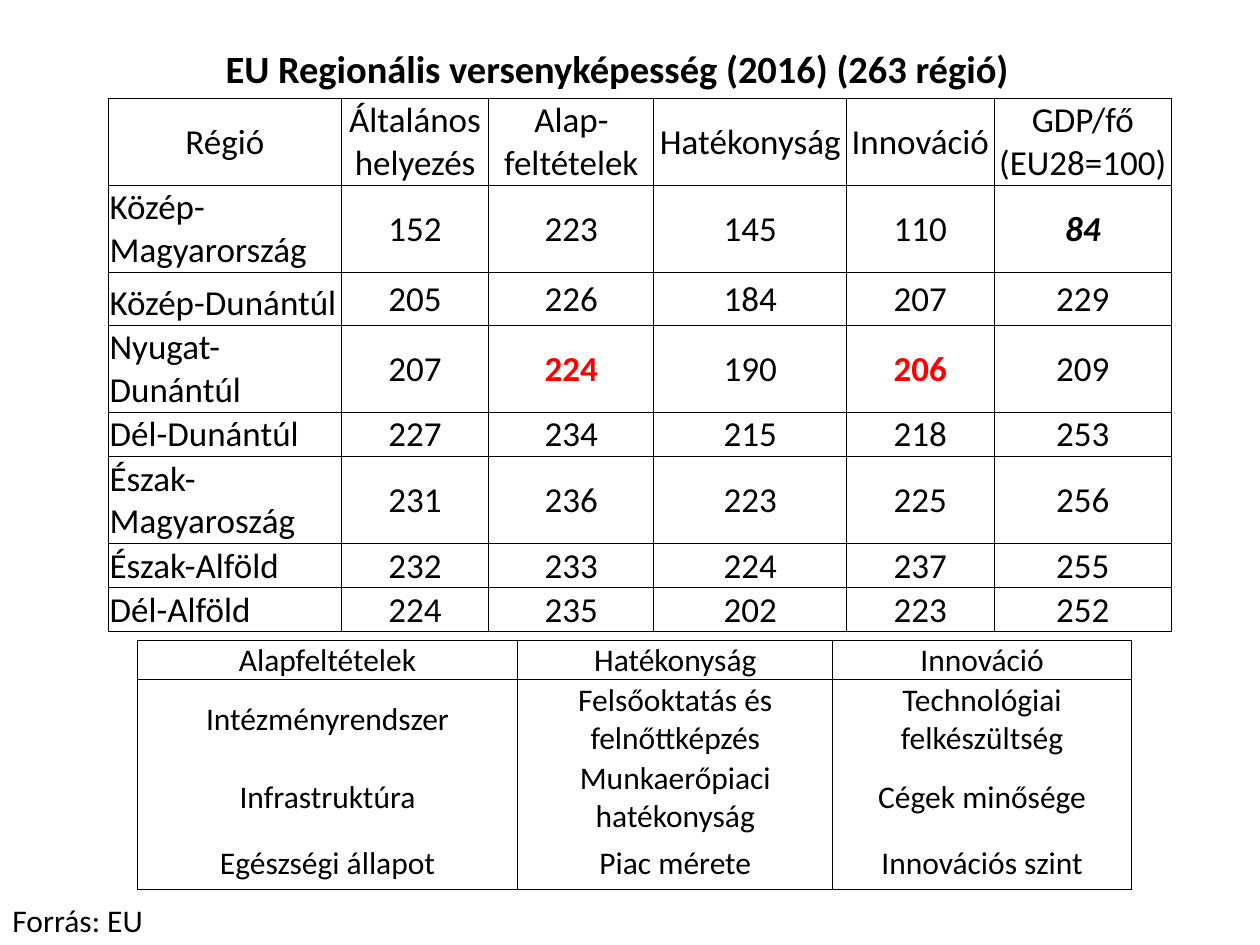
from lxml import etree
from pptx import Presentation
from pptx.dml.color import RGBColor
from pptx.enum.text import MSO_ANCHOR, PP_ALIGN
from pptx.oxml.ns import qn
from pptx.util import Inches, Pt

LEFT, CENTER = PP_ALIGN.LEFT, PP_ALIGN.CENTER
TOP, MIDDLE, BOTTOM = MSO_ANCHOR.TOP, MSO_ANCHOR.MIDDLE, MSO_ANCHOR.BOTTOM
BLACK = RGBColor(0, 0, 0)
RED = RGBColor(255, 0, 0)
FONT = "Calibri"
TITLE_ONLY = 5

RANKINGS = [
    ["Régió", "Általános helyezés", "Alap-feltételek", "Hatékonyság", "Innováció", "GDP/fő (EU28=100)"],
    ["Közép-Magyarország", "152", "223", "145", "110", "84"],
    ["Közép-Dunántúl", "205", "226", "184", "207", "229"],
    ["Nyugat-Dunántúl", "207", "224", "190", "206", "209"],
    ["Dél-Dunántúl", "227", "234", "215", "218", "253"],
    ["Észak-Magyaroszág", "231", "236", "223", "225", "256"],
    ["Észak-Alföld", "232", "233", "224", "237", "255"],
    ["Dél-Alföld", "224", "235", "202", "223", "252"],
]
HIGHLIGHTS = {
    (1, 5): {"bold": True, "italic": True},
    (3, 2): {"bold": True, "color": RED},
    (3, 4): {"bold": True, "color": RED},
}
PILLARS = [
    ["Alapfeltételek", "Hatékonyság", "Innováció"],
    ["Intézményrendszer", "Felsőoktatás és felnőttképzés", "Technológiai felkészültség"],
    ["Infrastruktúra", "Munkaerőpiaci hatékonyság", "Cégek minősége"],
    ["Egészségi állapot", "Piac mérete", "Innovációs szint"],
]


def write_text(frame, text, size, align=LEFT, bold=False, italic=False, color=BLACK):
    """Write one formatted paragraph into a text frame."""
    para = frame.paragraphs[0]
    para.alignment = align
    span = para.add_run()
    span.text = text
    font = span.font
    font.name, font.size, font.bold, font.italic = FONT, Pt(size), bold, italic
    font.color.rgb = color


def set_borders(cell, visible):
    """Draw thin black lines on the visible sides (of L, R, T, B) and none elsewhere."""
    properties = cell._tc.get_or_add_tcPr()
    for index, side in enumerate("LRTB"):
        line = etree.Element(qn(f"a:ln{side}"), w=str(Pt(0.5)))
        if side in visible:
            fill = etree.SubElement(line, qn("a:solidFill"))
            etree.SubElement(fill, qn("a:srgbClr"), val=str(BLACK))
        else:
            etree.SubElement(line, qn("a:noFill"))
        properties.insert(index, line)


def fill_cell(cell, text, size, align=CENTER, anchor=MIDDLE, borders="LRTB", **style):
    """Write a transparent cell with tight margins and the given borders."""
    cell.margin_left = cell.margin_right = cell.margin_top = Inches(0.01)
    cell.margin_bottom = 0
    cell.vertical_anchor = anchor
    cell.fill.background()
    write_text(cell.text_frame, text, size, align, **style)
    set_borders(cell, borders)


def add_grid(page, box, widths, heights):
    """Add a plain table in the box with the given column widths and row heights."""
    holder = page.shapes.add_table(len(heights), len(widths), *map(Inches, box))
    table = holder.table
    table.first_row = table.horz_banding = False
    for column, width in zip(table.columns, widths):
        column.width = Inches(width)
    for row, height in zip(table.rows, heights):
        row.height = Inches(height)
    holder.height = Inches(box[3])
    return table


def add_rankings(page, box):
    """Place the table of regional rankings."""
    widths = [1.85, 1.17, 1.31, 1.53, 1.17, 1.41]
    heights = [0.41, 0.42, 0.42, 0.42, 0.21, 0.42, 0.21, 0.21]
    table = add_grid(page, box, widths, heights)
    for r, values in enumerate(RANKINGS):
        for c, value in enumerate(values):
            is_region = r > 0 and c == 0
            fill_cell(table.cell(r, c), value, 20,
                      align=LEFT if is_region else CENTER,
                      anchor=BOTTOM if is_region else MIDDLE,
                      **HIGHLIGHTS.get((r, c), {}))


def add_pillars(page, box):
    """Place the table of pillars, ruled only around its header and body."""
    table = add_grid(page, box, [3.02, 2.5, 2.37], [0.21, 0.42, 0.42, 0.42])
    borders = ["LRTB", "LRT", "LR", "LRB"]
    for r, values in enumerate(PILLARS):
        for c, value in enumerate(values):
            fill_cell(table.cell(r, c), value, 18, borders=borders[r])


def add_title(page, box):
    """Move and format the title placeholder."""
    title = page.shapes.title
    title.left, title.top, title.width, title.height = map(Inches, box)
    title.text_frame.vertical_anchor = TOP
    title.text_frame.word_wrap = True
    write_text(title.text_frame, "EU Regionális versenyképesség (2016) (263 régió)", 22, bold=True)


def add_source(page, box):
    """Place the source note."""
    note = page.shapes.add_textbox(*map(Inches, box))
    note.text_frame.word_wrap = True
    write_text(note.text_frame, "Forrás: EU", 18)


def main():
    """Build the slide and save it."""
    deck = Presentation()
    deck.slide_width, deck.slide_height = Inches(10), Inches(7.5)
    page = deck.slides.add_slide(deck.slide_layouts[TITLE_ONLY])
    add_title(page, (1.69, 0.31, 7.06, 0.47))
    add_rankings(page, (0.86, 0.78, 8.44, 4.16))
    add_pillars(page, (1.09, 5.08, 7.89, 1.95))
    add_source(page, (0, 7.1, 1.48, 0.4))
    deck.save("out.pptx")


if __name__ == "__main__":
    main()
